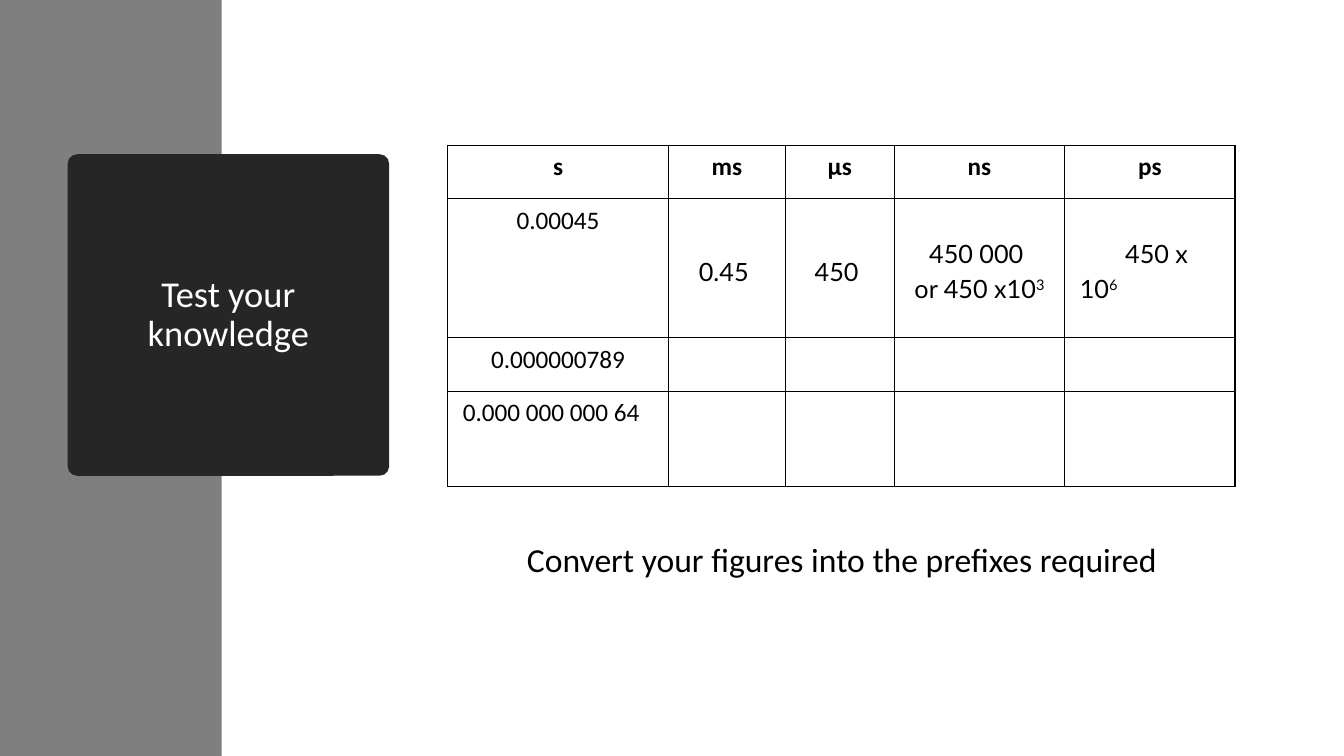
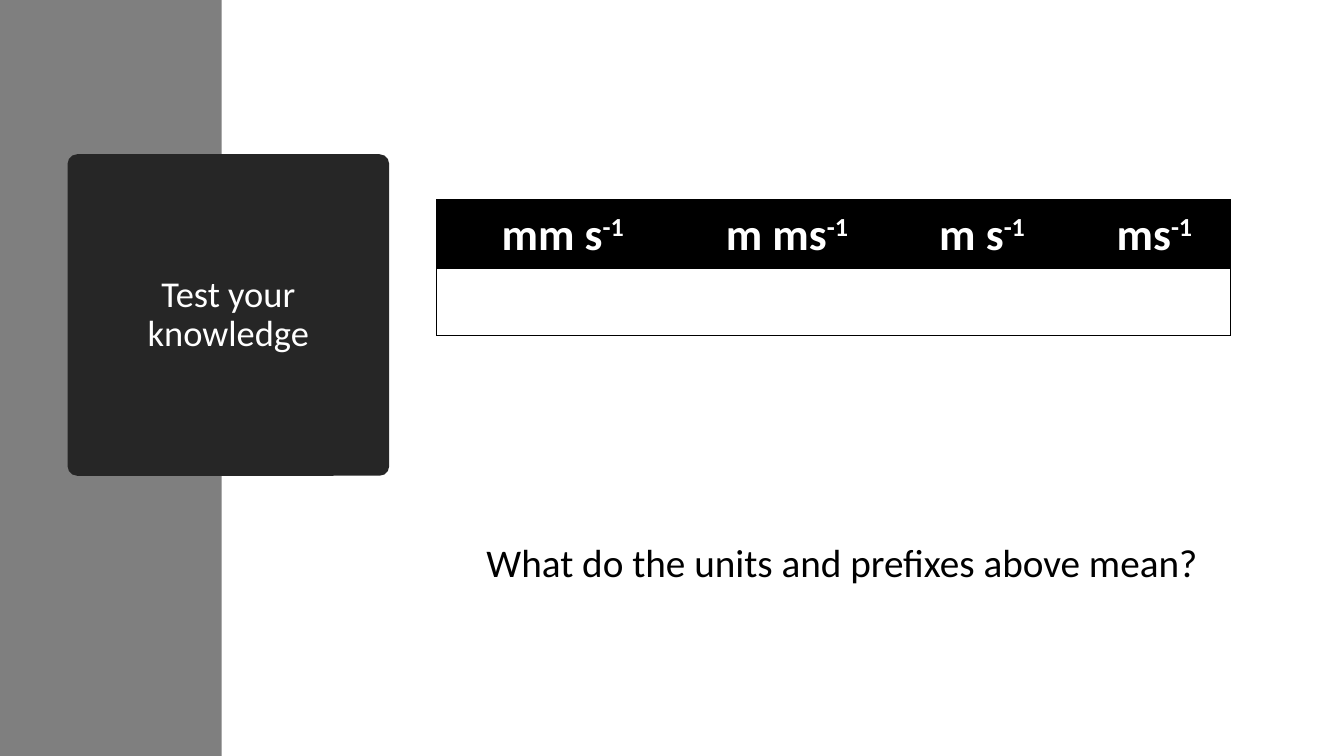
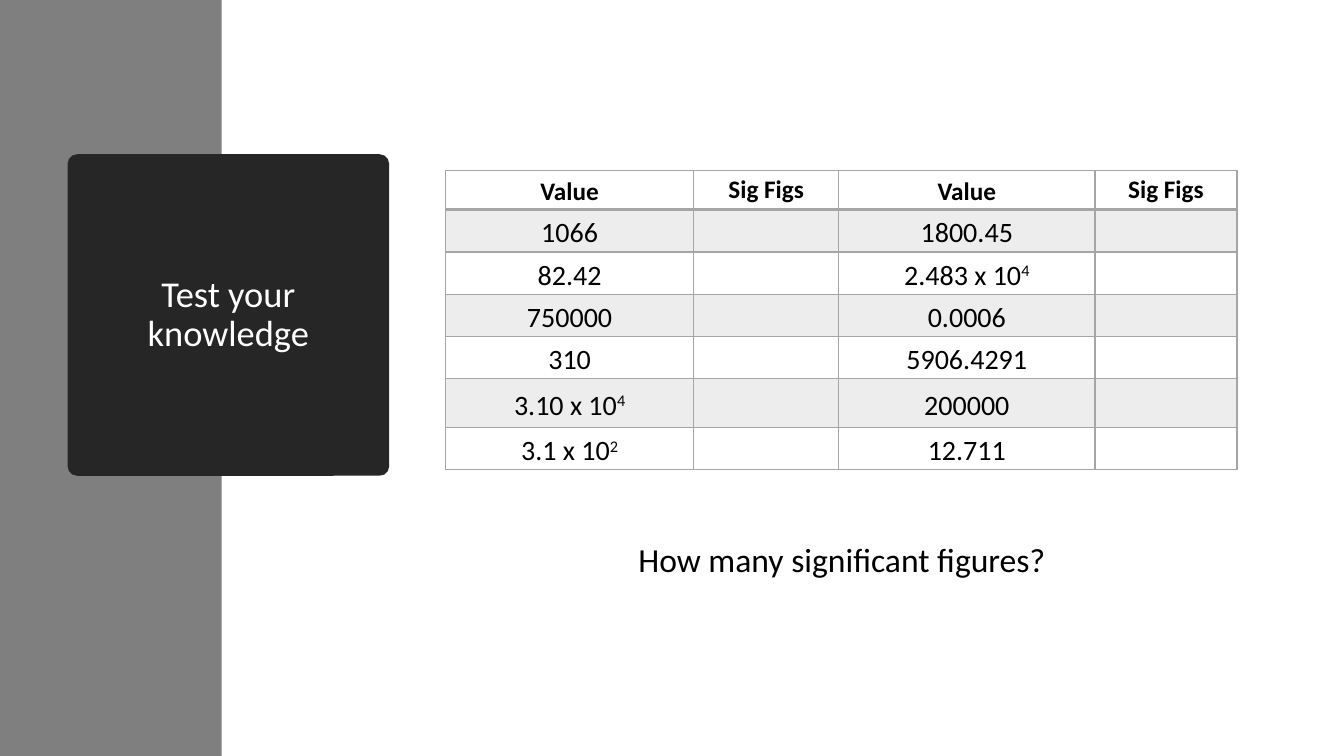
from lxml import etree
from pptx import Presentation
from pptx import util as u
from pptx.dml.color import RGBColor
from pptx.enum import shapes, text
from pptx.oxml.ns import qn

COLORS = {"band": "7F7F7F", "title": "262626", "white": "FFFFFF",
          "black": "000000", "grid": "A5A5A5", "stripe": "EDEDED"}
NO_STYLE = "{2D5ABB26-0587-4C30-8999-92F81FD0307C}"


def write(tf, content, size, color, spacing, bold=False, font="Calibri"):
    for i, line in enumerate(content.split("\n")):
        p = tf.paragraphs[0] if i == 0 else tf.add_paragraph()
        p.alignment = text.PP_ALIGN.CENTER
        p.line_spacing = spacing
        for j, part in enumerate(line.split("^")):
            r = p.add_run()
            r.text = part
            r.font.name = font
            r.font.size = u.Pt(size)
            r.font.bold = bold
            r.font.color.rgb = RGBColor.from_string(COLORS[color])
            if j % 2:
                r.font._element.set("baseline", "30000")


def border(cell, side, color, width):
    ln = etree.SubElement(cell._tc.get_or_add_tcPr(), qn("a:ln" + side), w=str(u.Pt(width)))
    fill = etree.SubElement(ln, qn("a:solidFill"))
    etree.SubElement(fill, qn("a:srgbClr"), val=COLORS[color])


slides = [
    {"prompt": "Convert your figures into the prefixes required", "prompt_size": 24,
     "at": (4.44, 1.44), "cols": [2.19, 1.16, 1.08, 1.69, 1.69],
     "heights": [0.53, 1.38, 0.53, 0.95], "inset": 0.15, "top": 0.02,
     "head_size": 18, "size": 18, "head_color": "black", "head_fill": None, "stripe": False,
     "grid": "black", "line": 1, "head_line": 1, "inner": True,
     "rows": [["s", "ms", "μs", "ns", "ps"],
              ["0.00045", "0.45 ", "450 ", "450 000 \nor 450 x10^3", "450 x 10^6"],
              ["0.000000789", "", "", "", ""],
              ["0.000 000 000 64", "", "", "", ""]]},
    {"prompt": "What do the units and prefixes above mean?", "prompt_size": 28,
     "at": (4.33, 1.98), "cols": [2.5, 1.95, 0.53, 1.39, 1.5],
     "heights": [0.69, 0.66], "inset": 0.22, "top": 0,
     "head_size": 32, "size": 18, "head_color": "white", "head_fill": "black", "stripe": False,
     "grid": "black", "line": 0.5, "head_line": 0.5, "inner": False,
     "rows": [["mm s^-1", "m ms^-1", "m s^-1", "", "ms^-1"],
              ["", "", "", "", ""]]},
    {"prompt": "How many significant figures?", "prompt_size": 24,
     "at": (4.42, 1.69), "cols": [2.46, 1.44, 2.54, 1.41],
     "heights": [0.39, 0.42, 0.42, 0.42, 0.42, 0.48, 0.42], "inset": 0.12, "top": 0,
     "head_size": 18, "size": 20, "head_color": "black", "head_fill": None, "stripe": True,
     "grid": "grid", "line": 1, "head_line": 2, "inner": True,
     "rows": [["Value", "Sig Figs", "Value", "Sig Figs"],
              ["1066", "", "1800.45", ""],
              ["82.42", "", "2.483 x 10^4", ""],
              ["750000", "", "0.0006", ""],
              ["310", "", "5906.4291", ""],
              ["3.10 x 10^4", "", "200000", ""],
              ["3.1 x 10^2", "", "12.711", ""]]},
]

prs = Presentation()
prs.slide_width = u.Inches(13.33)
prs.slide_height = u.Inches(7.5)
tables = []

for spec_row in slides:
    d = spec_row
    s = prs.slides.add_slide(prs.slide_layouts[6])

    for kind, box, color in [
        (shapes.MSO_SHAPE.RECTANGLE, (0, 0, 2.2, 7.5), "band"),
        (shapes.MSO_SHAPE.ROUNDED_RECTANGLE, (0.67, 1.53, 3.19, 3.19), "title"),
    ]:
        sp = s.shapes.add_shape(kind, *[u.Inches(v) for v in box])
        sp.shadow.inherit = False
        sp.fill.solid()
        sp.fill.fore_color.rgb = RGBColor.from_string(COLORS[color])
        sp.line.fill.background()
    sp.adjustments[0] = 0.03
    tf = sp.text_frame
    tf.word_wrap = True
    tf.vertical_anchor = text.MSO_ANCHOR.MIDDLE
    tf.margin_left = tf.margin_right = u.Inches(0.5)
    write(tf, "Test your knowledge", 26, "white", 0.9)

    sp = s.shapes.add_textbox(u.Inches(4.42), u.Inches(5.34), u.Inches(7.86), u.Inches(1.41))
    sp.text_frame.word_wrap = True
    write(sp.text_frame, d["prompt"], d["prompt_size"], "black", 0.9)

    n_rows, n_cols = len(d["heights"]), len(d["cols"])
    left, top = d["at"]
    frame = s.shapes.add_table(n_rows, n_cols, u.Inches(left), u.Inches(top),
                               u.Inches(sum(d["cols"])), u.Inches(sum(d["heights"])))
    table = frame.table
    tables.append(table)
    table.first_row = table.horz_banding = False
    table._tbl.tblPr.find(qn("a:tableStyleId")).text = NO_STYLE
    for col, width in zip(table.columns, d["cols"]):
        col.width = u.Inches(width)
    for row, height in zip(table.rows, d["heights"]):
        row.height = u.Inches(height)

    for i, row in enumerate(d["rows"]):
        for j, content in enumerate(row):
            cell = table.cell(i, j)
            head = i == 0
            edges = [("L", j == 0, d["line"]),
                     ("R", j == n_cols - 1, d["line"]),
                     ("T", i == 0, d["head_line"] if i == 1 else d["line"]),
                     ("B", i == n_rows - 1, d["head_line"] if head else d["line"])]
            for side, outer, width in edges:
                if outer or d["inner"]:
                    border(cell, side, d["grid"], width)
            fill = d["head_fill"] if head else "stripe" if d["stripe"] and i % 2 else None
            if fill:
                cell.fill.solid()
                cell.fill.fore_color.rgb = RGBColor.from_string(COLORS[fill])
            else:
                cell.fill.background()
            if content:
                cell.margin_left = cell.margin_right = u.Inches(d["inset"])
                cell.margin_top, cell.margin_bottom = u.Inches(d["top"]), 0
                if d["stripe"] and j % 2 == 0:
                    cell.vertical_anchor = text.MSO_ANCHOR.MIDDLE
                write(cell.text_frame, content, d["head_size"] if head else d["size"],
                      d["head_color"] if head else "black", 1.15, head,
                      "Lato" if d is slides[0] and i == 1 and j else "Calibri")

prefixes, units, figures = tables
for j in range(1, 5):
    prefixes.cell(1, j).vertical_anchor = text.MSO_ANCHOR.MIDDLE
for i in range(1, 4):
    p = prefixes.cell(i, 0).text_frame.paragraphs[0]
    p.space_before = p.space_after = u.Pt(6)
p.alignment = text.PP_ALIGN.LEFT
p = prefixes.cell(1, 4).text_frame.paragraphs[0]
p.alignment = text.PP_ALIGN.LEFT
p._p.get_or_add_pPr().set("indent", str(u.Inches(0.45)))
units.cell(0, 2).merge(units.cell(0, 3))

prs.save("out.pptx")
